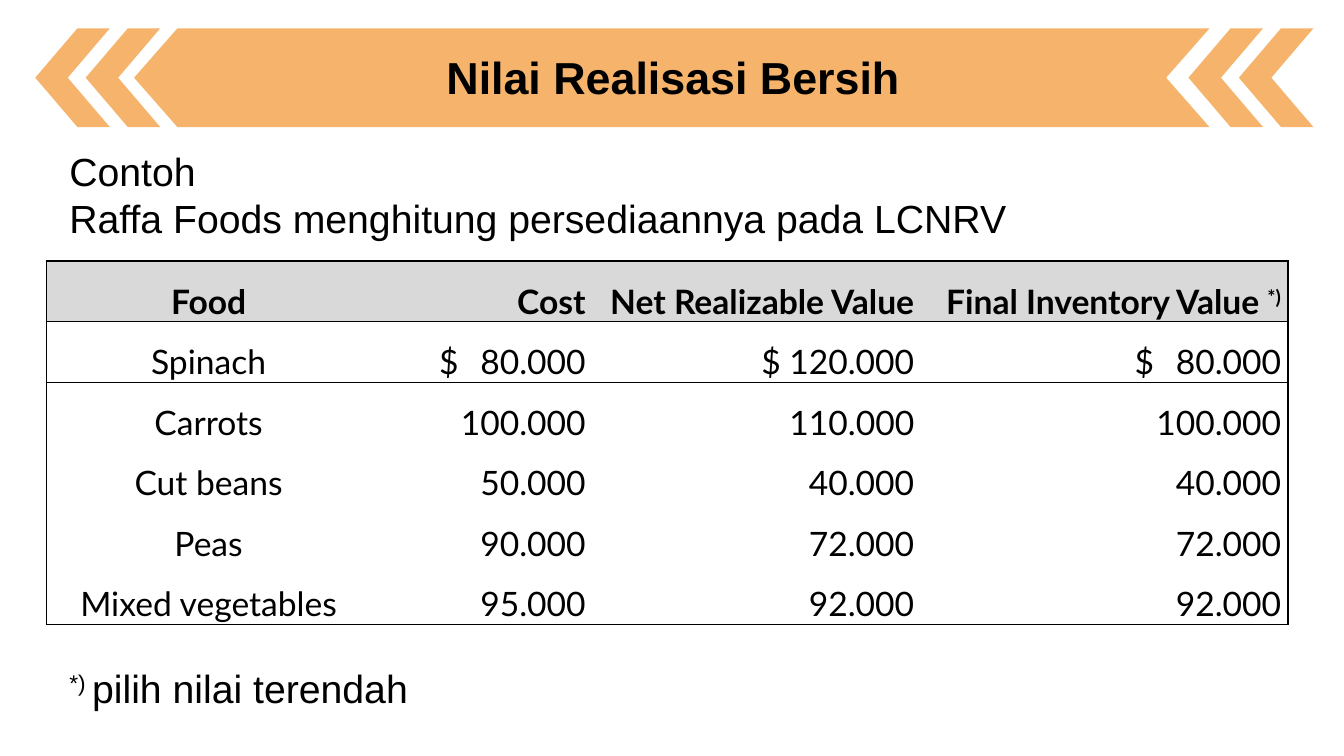
from lxml import etree
from pptx import Presentation
from pptx.dml.color import RGBColor
from pptx.enum.shapes import MSO_SHAPE
from pptx.enum.text import MSO_ANCHOR, PP_ALIGN
from pptx.oxml.ns import qn
from pptx.util import Pt

CHEVRON = MSO_SHAPE.CHEVRON
TOP, MIDDLE = MSO_ANCHOR.TOP, MSO_ANCHOR.MIDDLE
LEFT, CENTER, RIGHT = PP_ALIGN.LEFT, PP_ALIGN.CENTER, PP_ALIGN.RIGHT

# Content: a line is a list of (text, run attributes)
SUPER = {"baseline": "30000"}
WIDE = {"spc": "930"}
TITLE = [("Nilai Realisasi Bersih", {})]
INTRO = [
    [("Contoh", {})],
    [("Raffa Foods menghitung persediaannya pada LCNRV", {})],
]
FOOTNOTE = [[("*) ", SUPER), ("pilih nilai terendah", {})]]
EIGHTY = [("$", {}), (" ", WIDE), ("80.000", {})]
FINAL_VALUE = [("Final Inventory Value ", {}), ("*)", SUPER)]
FOODS = [
    ["Food", "Cost", "Net Realizable Value", FINAL_VALUE],
    ["Spinach", EIGHTY, "$ 120.000", EIGHTY],
    ["Carrots", "100.000", "110.000", "100.000"],
    ["Cut beans", "50.000", "40.000", "40.000"],
    ["Peas", "90.000", "72.000", "72.000"],
    ["Mixed vegetables", "95.000", "92.000", "92.000"],
]

THEME = {
    "banner": RGBColor(0xF3, 0x93, 0x2D), "banner_alpha": "70000",
    "header": RGBColor(0xD9, 0xD9, 0xD9), "ink": RGBColor(0, 0, 0),
    "text_font": "Arial", "table_font": "Lato",
    "title": 32, "body": 28, "table": 24,
}

# Layout in points
SLIDE_W, SLIDE_H = 960, 540
BANNER_TOP, BANNER_H = 20.2, 70.6
CHEVRON_W, CHEVRON_STEP, CHEVRON_ADJ = 53.3, 36, 0.565
LEFT_CHEVRONS, RIGHT_CHEVRONS = 25.2, 848.9
BAR_LEFT, BAR_RIGHT, BAR_POINT = 95.8, 864, 31
TEXT_LEFT, TEXT_W, LINE_H = 42.5, 867.6, 33.6
INTRO_TOP, FOOTNOTE_LINE = 101.5, 11
TABLE_LEFT, TABLE_TOP, ROW_H = 33.1, 186.5, 43.2
COL_W = [231.8, 158.4, 234.7, 262.1]
NO_STYLE = "{2D5ABB26-0587-4C30-8999-92F81FD0307C}"

prs = Presentation()
prs.slide_width, prs.slide_height = Pt(SLIDE_W), Pt(SLIDE_H)
s = prs.slides.add_slide(prs.slide_layouts[6])


def write(p, line, font, size, align, bold=False):
    p.alignment = align
    for text, attributes in line:
        r = p.add_run()
        r.text = text
        r.font.name, r.font.size, r.font.bold = font, Pt(size), bold
        r.font.color.rgb = THEME["ink"]
        for name, value in attributes.items():
            r._r.get_or_add_rPr().set(name, value)


def add_text(x, y, w, h, lines, size, align=LEFT, anchor=TOP, bold=False, spacing=None):
    tf = s.shapes.add_textbox(Pt(x), Pt(y), Pt(w), Pt(h)).text_frame
    tf.word_wrap = True
    tf.vertical_anchor = anchor
    for i, line in enumerate(lines):
        p = tf.add_paragraph() if i else tf.paragraphs[0]
        p.line_spacing = spacing
        write(p, line, THEME["text_font"], size, align, bold)


def paint_banner(sp):
    sp.shadow.inherit = False
    sp.line.fill.background()
    sp.fill.solid()
    sp.fill.fore_color.rgb = THEME["banner"]
    color = sp._element.spPr.find(qn("a:solidFill"))[0]
    etree.SubElement(color, qn("a:alpha"), val=THEME["banner_alpha"])


def add_border(cell, tag):
    ln = etree.SubElement(cell._tc.get_or_add_tcPr(), qn(tag), w=str(Pt(1)))
    fill = etree.SubElement(ln, qn("a:solidFill"))
    etree.SubElement(fill, qn("a:srgbClr"), val=str(THEME["ink"]))


# Banner: paired chevrons on each side of a pointed bar
for start in (LEFT_CHEVRONS, RIGHT_CHEVRONS):
    for i in range(2):
        sp = s.shapes.add_shape(CHEVRON, Pt(start + i * CHEVRON_STEP), Pt(BANNER_TOP),
                                Pt(CHEVRON_W), Pt(BANNER_H))
        sp.adjustments[0] = CHEVRON_ADJ
        sp.rotation = 180
        paint_banner(sp)

mid, bottom = BANNER_TOP + BANNER_H / 2, BANNER_TOP + BANNER_H
outline = [
    (BAR_RIGHT, BANNER_TOP), (BAR_RIGHT - BAR_POINT, mid), (BAR_RIGHT, bottom),
    (BAR_LEFT + BAR_POINT, bottom), (BAR_LEFT, mid),
]
bar = s.shapes.build_freeform(Pt(BAR_LEFT + BAR_POINT), Pt(BANNER_TOP))
bar.add_line_segments([(Pt(x), Pt(y)) for x, y in outline])
paint_banner(bar.convert_to_shape())

# Title, introduction and footnote
add_text(25.2, 26.6, 911.5, 56.9, [TITLE], THEME["title"], CENTER, MIDDLE, True)
for line_no, lines in ((0, INTRO), (FOOTNOTE_LINE, FOOTNOTE)):
    add_text(TEXT_LEFT, INTRO_TOP + line_no * LINE_H, TEXT_W, len(lines) * LINE_H + 7.2,
             lines, THEME["body"], spacing=Pt(LINE_H))

# Inventory table with an outer frame and a ruled header
rows, cols = len(FOODS), len(COL_W)
frame = s.shapes.add_table(rows, cols, Pt(TABLE_LEFT), Pt(TABLE_TOP),
                           Pt(sum(COL_W)), Pt(rows * ROW_H))
table = frame.table
table._tbl.tblPr.find(qn("a:tableStyleId")).text = NO_STYLE
for col, width in zip(table.columns, COL_W):
    col.width = Pt(width)
for i, values in enumerate(FOODS):
    table.rows[i].height = Pt(ROW_H)
    for j, value in enumerate(values):
        cell = table.cell(i, j)
        cell.margin_left = cell.margin_right = Pt(5)
        cell.margin_top = cell.margin_bottom = 0
        p = cell.text_frame.paragraphs[0]
        p.line_spacing = 1.5
        line = [(value, {})] if isinstance(value, str) else value
        write(p, line, THEME["table_font"], THEME["table"], RIGHT if j else CENTER, i == 0)
        edges = (("a:lnL", j == 0), ("a:lnR", j == cols - 1),
                 ("a:lnT", i in (0, 1)), ("a:lnB", i in (0, rows - 1)))
        for tag, shown in edges:
            if shown:
                add_border(cell, tag)
        if i == 0:
            cell.fill.solid()
            cell.fill.fore_color.rgb = THEME["header"]
        else:
            cell.fill.background()

prs.save("out.pptx")
